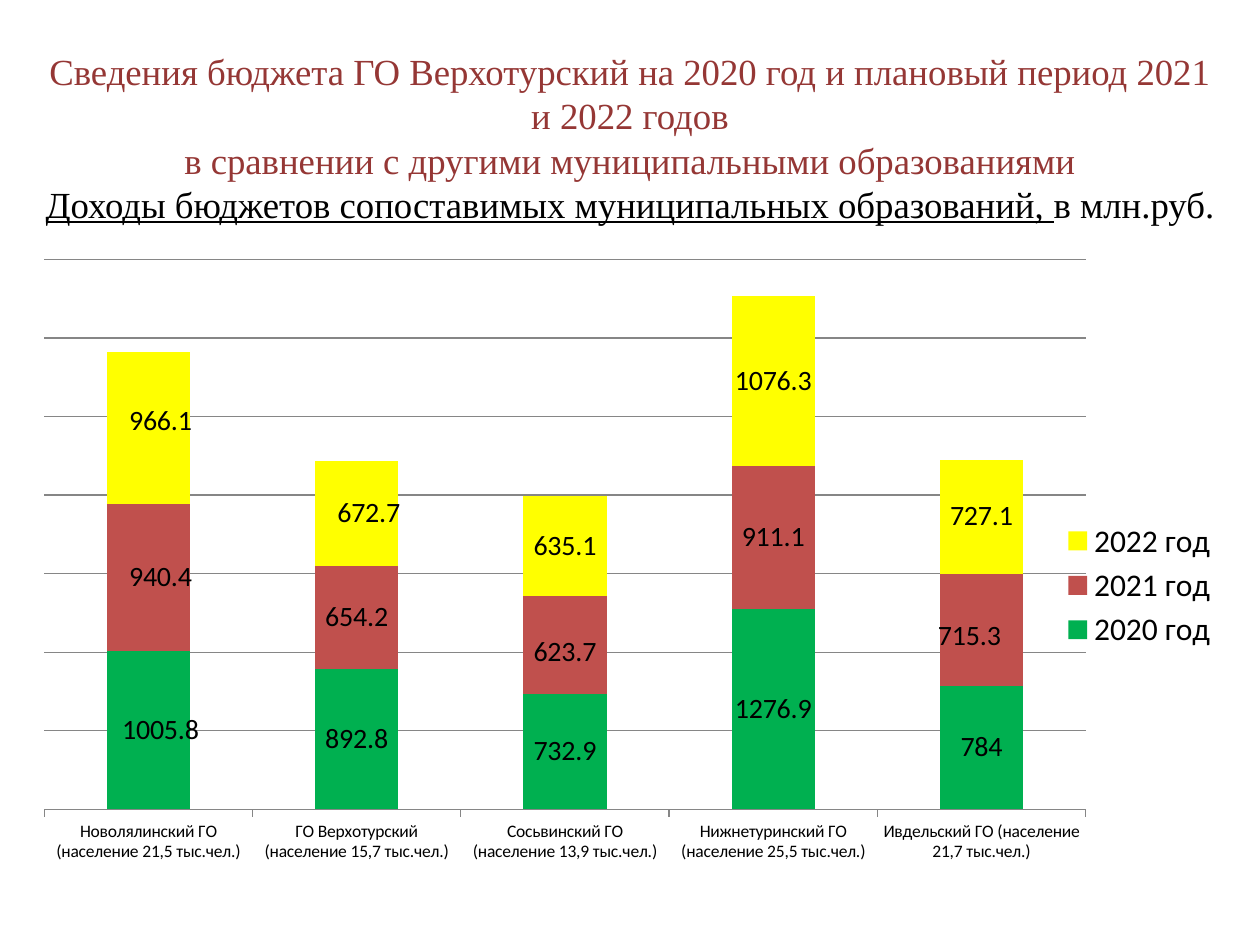
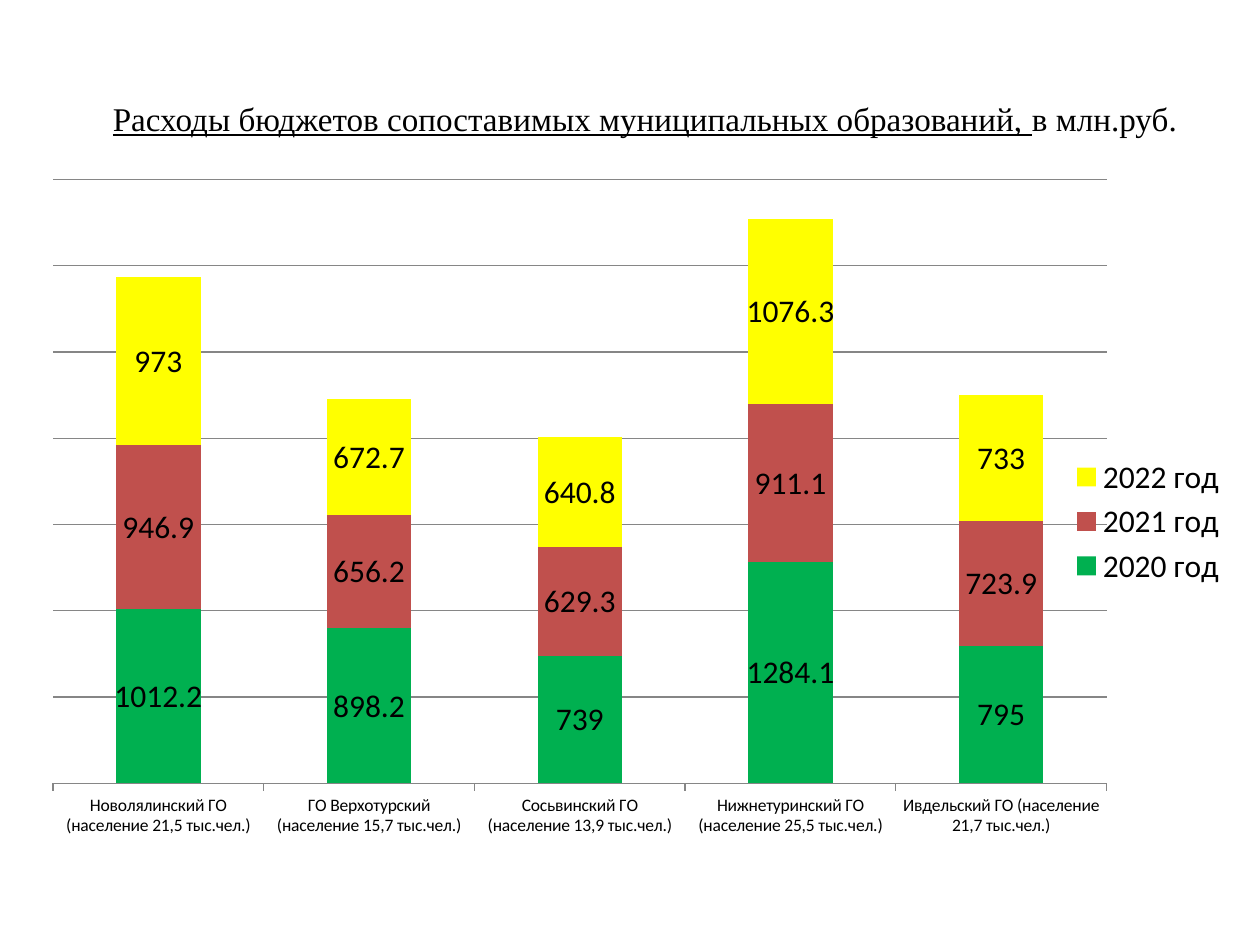
from lxml.etree import SubElement
from pptx import Presentation
from pptx.chart.data import CategoryChartData as ChartData
from pptx.dml.color import RGBColor
from pptx.enum.chart import XL_CHART_TYPE as ChartType
from pptx.enum.chart import XL_LABEL_POSITION as LabelPosition
from pptx.enum.chart import XL_LEGEND_POSITION as LegendPosition
from pptx.enum.text import MSO_ANCHOR as Anchor
from pptx.enum.text import PP_ALIGN as Align
from pptx.oxml.ns import qn
from pptx.util import Pt

BLACK, MAROON, GREY = "000000", "953735", "868686"
TITLE_FONT, CHART_FONT = "Times New Roman", "Calibri"
YEARS = {"2020 год": "00B050", "2021 год": "C0504D", "2022 год": "FFFF00"}
DISTRICTS = {
    "Новолялинский ГО": "21,5",
    "ГО Верхотурский": "15,7",
    "Сосьвинский ГО": "13,9",
    "Нижнетуринский ГО": "25,5",
    "Ивдельский ГО": "21,7",
}
INCOME = [
    (1005.8, 892.8, 732.9, 1276.9, 784),
    (940.4, 654.2, 623.7, 911.1, 715.3),
    (966.1, 672.7, 635.1, 1076.3, 727.1),
]
INCOME_LABEL_SHIFTS = {
    (0, 0): (0.01, 0),
    (1, 0): (0.01, 0),
    (1, 2): (0, 0.01),
    (1, 4): (-0.01, 0.01),
    (2, 0): (0.01, -0.01),
    (2, 1): (0.01, 0),
}
SPENDING = [
    (1012.2, 898.2, 739, 1284.1, 795),
    (946.9, 656.2, 629.3, 911.1, 723.9),
    (973, 672.7, 640.8, 1076.3, 733),
]


def colour(value):
    return RGBColor.from_string(value)


def assign(target, values):
    for name, value in values.items():
        setattr(target, name, value)


def style_font(font, name, size, shade=BLACK, underline=None):
    assign(font, {"name": name, "size": Pt(size), "underline": underline})
    font.color.rgb = colour(shade)


def manual_layout(parent, position, values):
    for old in parent.findall(qn("c:layout")):
        parent.remove(old)
    layout = SubElement(parent, qn("c:layout"))
    parent.insert(position, layout)
    manual = SubElement(layout, qn("c:manualLayout"))
    for tag, value in values.items():
        SubElement(manual, qn(f"c:{tag}")).set("val", str(value))


class BudgetDeck:
    """Builds budget comparison slides in one shared style."""

    def __init__(self):
        self.deck = Presentation()
        assign(self.deck, {"slide_width": Pt(720), "slide_height": Pt(540)})
        self.page = None

    def add_page(self):
        self.page = self.deck.slides.add_slide(self.deck.slide_layouts[6])

    def add_title(self, frame, size, lines, top_inset=3.6):
        box = self.page.shapes.add_textbox(*map(Pt, frame))
        assign(box.text_frame, {
            "word_wrap": True,
            "vertical_anchor": Anchor.MIDDLE,
            "margin_top": Pt(top_inset),
        })
        for index, line in enumerate(lines):
            para = box.text_frame.paragraphs[0] if index == 0 else box.text_frame.add_paragraph()
            para.alignment = Align.CENTER
            for text, shade, underline in line:
                span = para.add_run()
                span.text = text
                style_font(span.font, TITLE_FONT, size, shade, underline)

    def add_stacked_chart(self, frame, plot_frame, rows, label_size, shifts=None):
        data = ChartData()
        data.categories = [f"{name} (население {people} тыс.чел.)"
                           for name, people in DISTRICTS.items()]
        for year, values in zip(YEARS, rows):
            data.add_series(year, values)
        chart = self.page.shapes.add_chart(
            ChartType.COLUMN_STACKED, *map(Pt, frame), data).chart
        assign(chart, {"has_title": False, "has_legend": True})
        style_font(chart.font, CHART_FONT, 18)
        assign(chart.legend, {"position": LegendPosition.RIGHT, "include_in_layout": False})
        style_font(chart.legend.font, CHART_FONT, 18)
        self.style_axes(chart)
        plot = chart.plots[0]
        assign(plot, {"gap_width": 150, "overlap": 100, "vary_by_categories": False})
        for series, shade in zip(plot.series, YEARS.values()):
            series.format.fill.solid()
            series.format.fill.fore_color.rgb = colour(shade)
            assign(series.data_labels, {"show_value": True, "position": LabelPosition.CENTER})
            style_font(series.data_labels.font, CHART_FONT, label_size)
        for (row, column), shift in (shifts or {}).items():
            self.shift_label(plot.series[row], column, label_size, shift)
        manual_layout(chart.element.xpath(".//c:plotArea")[0], 0, {
            "layoutTarget": "inner", "xMode": "edge", "yMode": "edge",
            **dict(zip("xywh", plot_frame)),
        })

    def style_axes(self, chart):
        axis = chart.value_axis
        assign(axis, {
            "visible": False,
            "has_major_gridlines": True,
            "minimum_scale": 0,
            "maximum_scale": 3500,
            "major_unit": 500,
        })
        style_font(chart.category_axis.tick_labels.font, CHART_FONT, 10)
        for line in (axis.major_gridlines.format.line, chart.category_axis.format.line):
            line.color.rgb = colour(GREY)
            line.width = Pt(0.75)

    def shift_label(self, series, column, size, shift):
        label = series.points[column].data_label
        style_font(label.font, CHART_FONT, size)
        label.position = LabelPosition.CENTER
        element = series.data_labels._element.xpath(f"c:dLbl[c:idx/@val={column}]")[0]
        manual_layout(element, 1, dict(zip("xy", shift)))


def main():
    budget = BudgetDeck()
    units = ("в млн.руб.", BLACK, False)

    budget.add_page()
    budget.add_title((16.5, 16.5, 687, 124), 21, [
        [("Сведения бюджета ГО Верхотурский на 2020 год и плановый период 2021 и 2022 годов",
          MAROON, False)],
        [("в сравнении с другими муниципальными образованиями", MAROON, False)],
        [("Доходы бюджетов сопоставимых муниципальных образований, ", BLACK, True), units],
    ])
    budget.add_stacked_chart((11.5, 140.5, 692, 388), (0.02, 0.02, 0.86, 0.81),
                             INCOME, 16, INCOME_LABEL_SHIFTS)

    budget.add_page()
    budget.add_title((50.5, 22.5, 636, 67.5), 18.9, [
        [("Расходы бюджетов сопоставимых муниципальных образований, ", BLACK, True), units],
    ], top_inset=26)
    budget.add_stacked_chart((16.5, 90, 692, 416), (0.02, 0.03, 0.87, 0.83), SPENDING, 18)

    budget.deck.save("out.pptx")


if __name__ == "__main__":
    main()
